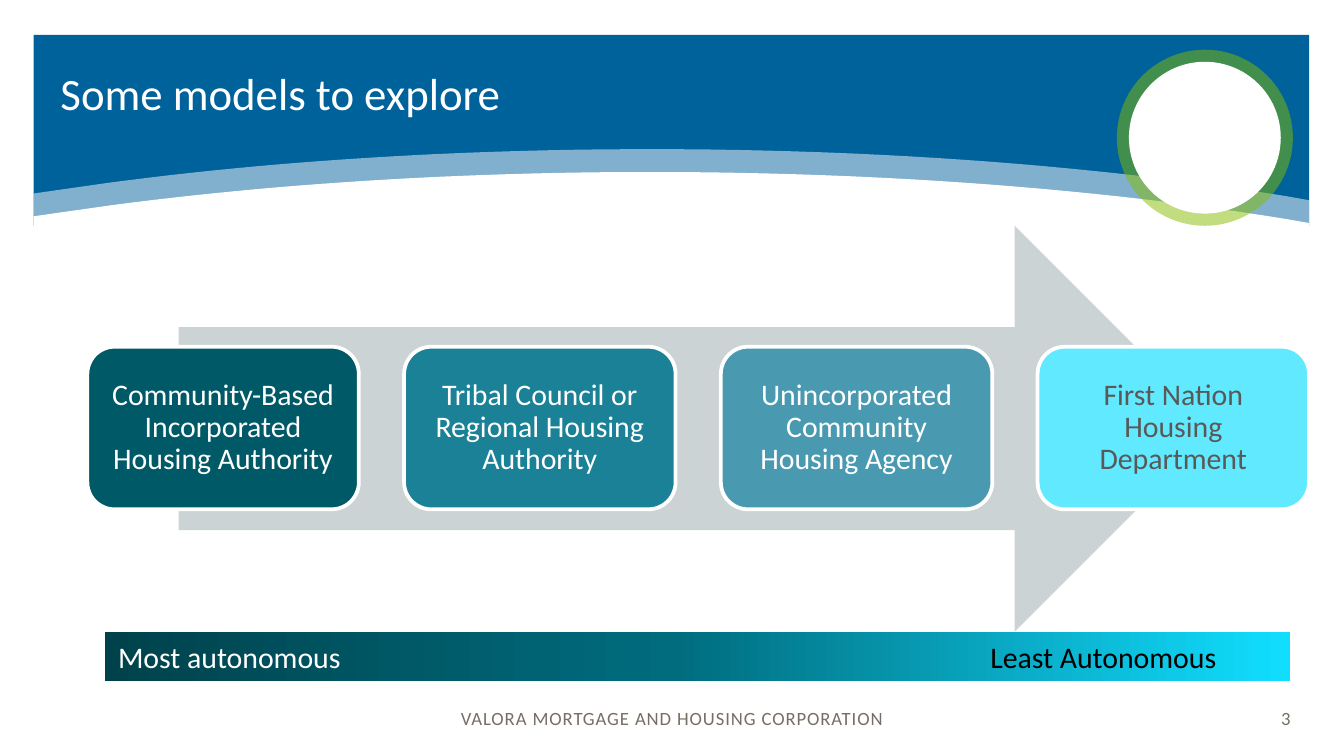
from copy import deepcopy

from lxml.etree import SubElement
from pptx import Presentation
from pptx.dml.color import RGBColor
from pptx.enum.shapes import MSO_SHAPE
from pptx.enum.text import MSO_ANCHOR, PP_ALIGN
from pptx.oxml.ns import qn
from pptx.util import Inches, Pt

FONT = "Calibri"
WHITE, BLUE, GREEN, GREY, BROWN = "FFFFFF", "00629B", "84BD00", "CCD3D5", "776E64"
MODELS = [
    ("Community-Based Incorporated Housing Authority", "005967", WHITE),
    ("Tribal Council or Regional Housing Authority", "1A8197", WHITE),
    ("Unincorporated Community Housing Agency", "499AB1", WHITE),
    ("First Nation Housing Department", "61E9FF", "595959"),
]
CARD_LEFT, LAST_CARD_LEFT = 0.65, 7.72
SCALE_STOPS = [(0, "00424C"), (0.48, "006C7E"), (1, "11DEFF")]


def color(hex_string):
    return RGBColor.from_string(hex_string)


def paint(shape, fill, opacity=None):
    """Give a shape a flat fill with no outline or shadow."""
    shape.shadow.inherit = False
    shape.line.fill.background()
    shape.fill.solid()
    shape.fill.fore_color.rgb = color(fill)
    if opacity is not None:
        rgb = shape.element.spPr.find(".//" + qn("a:srgbClr"))
        SubElement(rgb, qn("a:alpha"), val=str(opacity * 1000))
    return shape


def add_block(page, kind, left, top, width, height, fill, opacity=None):
    shape = page.shapes.add_shape(
        kind, Inches(left), Inches(top), Inches(width), Inches(height))
    return paint(shape, fill, opacity)


def write(box, *spans, size=16, align=PP_ALIGN.LEFT, anchor=MSO_ANCHOR.MIDDLE,
          line=None, spacing=None, margins=(0.1, 0.05), tab=None):
    """Write one paragraph; each span is a (text, colour) pair."""
    frame = box.text_frame
    frame.word_wrap = True
    frame.vertical_anchor = anchor
    frame.margin_left = frame.margin_right = Inches(margins[0])
    frame.margin_top = frame.margin_bottom = Inches(margins[1])
    para = frame.paragraphs[0]
    if tab is not None:
        tabs = SubElement(para._p.get_or_add_pPr(), qn("a:tabLst"))
        SubElement(tabs, qn("a:tab"), pos=str(Inches(tab)), algn="l")
    para.alignment = align
    if line is not None:
        para.line_spacing = line
    for text, text_color in spans:
        span = para.add_run()
        span.text = text
        span.font.name = FONT
        span.font.size = Pt(size)
        span.font.color.rgb = color(text_color)
        if spacing is not None:
            span._r.get_or_add_rPr().set("spc", str(spacing))


def curve(points, steps=24):
    """Points along a cubic Bézier curve."""
    weights = lambda t: ((1 - t)**3, 3 * t * (1 - t)**2, 3 * t**2 * (1 - t), t**3)
    return [tuple(sum(w * point[axis] for w, point in zip(weights(i / steps), points))
                  for axis in (0, 1)) for i in range(steps + 1)]


def add_wave(page, drop, opacity=None):
    """Curved lower edge of the banner, moved down by drop."""
    rising = curve([(0.81, 1.36), (2.01, 1.2), (3.38, 1.11), (4.84, 1.11)])
    falling = curve([(4.84, 1.11), (6.59, 1.11), (8.22, 1.24), (9.57, 1.46)])
    edge = [(0.25, 1.44), *rising, *falling[1:], (9.74, 1.49)]
    corners = [(x, y + drop) for x, y in edge] + [(9.74, 1.79), (0.25, 1.79)]
    outline = [(Inches(x), Inches(y)) for x, y in corners]
    builder = page.shapes.build_freeform(*outline[0])
    builder.add_line_segments(outline[1:], close=True)
    paint(builder.convert_to_shape(), WHITE, opacity)


def add_banner(page):
    add_block(page, MSO_SHAPE.RECTANGLE, 0.25, 0.26, 9.49, 1.42, BLUE)
    add_wave(page, 0, opacity=50)
    add_wave(page, 0.17)
    add_block(page, MSO_SHAPE.OVAL, 8.31, 0.37, 1.31, 1.31, GREEN, opacity=50)
    add_block(page, MSO_SHAPE.OVAL, 8.4, 0.46, 1.13, 1.13, WHITE)


def add_title(page, text):
    title = page.shapes.title
    title.left, title.top = Inches(0.35), Inches(0.26)
    title.width, title.height = Inches(7.86), Inches(0.89)
    write(title, (text, WHITE), size=24, line=Pt(26))
    # Bring the title in front of the banner
    title.element.getparent().append(title.element)


def add_footer(page):
    footer = add_block(page, MSO_SHAPE.RECTANGLE, 0, 5.05, 10, 0.58, WHITE)
    write(footer, ("VALORA MORTGAGE AND HOUSING CORPORATION", BROWN), size=10,
          align=PP_ALIGN.CENTER, spacing=50, margins=(0, 0))
    number = page.shapes.add_textbox(
        Inches(9.14), Inches(5.05), Inches(0.56), Inches(0.58))
    write(number, ("3", BROWN), size=10, align=PP_ALIGN.RIGHT, spacing=50)


def add_models(page):
    add_block(page, MSO_SHAPE.RIGHT_ARROW, 1.33, 1.68, 7.73, 3.02, GREY)
    step = (LAST_CARD_LEFT - CARD_LEFT) / (len(MODELS) - 1)
    for index, (name, fill, text_color) in enumerate(MODELS):
        card = add_block(page, MSO_SHAPE.ROUNDED_RECTANGLE,
                         CARD_LEFT + index * step, 2.58, 2.02, 1.21, fill)
        card.line.color.rgb = color(WHITE)
        card.line.width = Pt(2)
        write(card, (name, text_color), align=PP_ALIGN.CENTER, line=0.9,
              margins=(0.07, 0.07))


def add_scale(page):
    bar = add_block(page, MSO_SHAPE.RECTANGLE, 0.78, 4.7, 8.82, 0.37, WHITE)
    bar.fill.gradient()
    bar.fill.gradient_angle = 0
    stop_list = bar.element.spPr.find(".//" + qn("a:gsLst"))
    stop_list.append(deepcopy(stop_list[-1]))
    for stop, (position, stop_color) in zip(bar.fill.gradient_stops, SCALE_STOPS):
        stop.position = position
        stop.color.rgb = color(stop_color)
    write(bar, ("Most autonomous", WHITE), ("\tLeast Autonomous", "000000"),
          anchor=MSO_ANCHOR.TOP, tab=6.49)


def main():
    # Widescreen page, 16:9
    deck = Presentation()
    deck.slide_width, deck.slide_height = Inches(10), Inches(10 * 9 / 16)
    page = deck.slides.add_slide(deck.slide_layouts[5])
    add_banner(page)
    add_title(page, "Some models to explore")
    add_footer(page)
    add_models(page)
    add_scale(page)
    deck.save("out.pptx")


if __name__ == "__main__":
    main()
